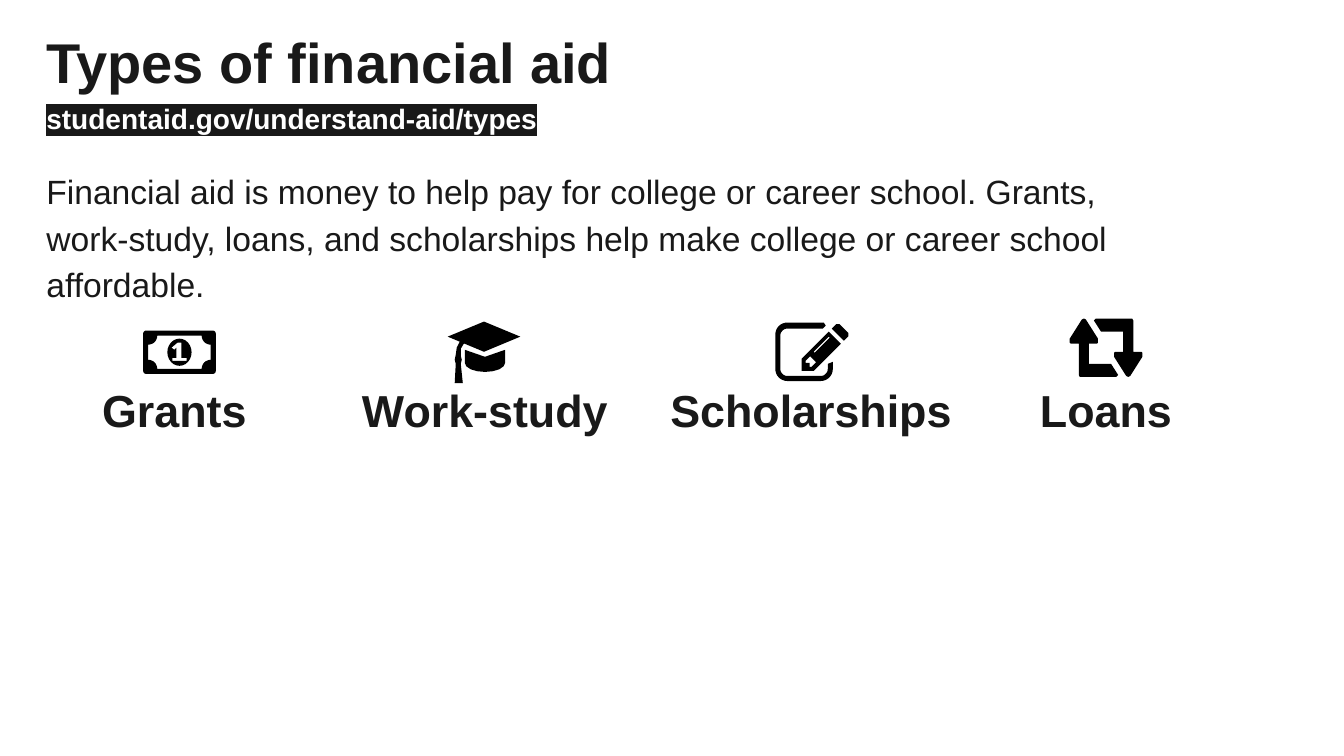
from math import cos, radians, sin

from lxml.etree import SubElement
from pptx import Presentation
from pptx.dml.color import RGBColor
from pptx.enum.text import MSO_ANCHOR as ANCHOR, MSO_AUTO_SIZE as AUTO, PP_ALIGN as ALIGN
from pptx.oxml.ns import qn
from pptx.util import Inches, Pt

INK, WHITE, BLACK = "191919", "FFFFFF", "000000"
LEFT, COLUMN_PITCH = 0.46, 3.08
LABEL_TOP, LABEL_HEIGHT = 3.86, 0.48
ICON_WIDTH = 72
UNITS_PER_INCH, STEPS_PER_UNIT = 100, 10


def rgb(value):
    """Turn a hex string into a colour."""
    return RGBColor.from_string(value)


def apply(target, values):
    """Set every attribute given in a dict of format values."""
    for name, value in values.items():
        setattr(target, name, value)


def arc(cx, cy, rx, ry, start, end, steps=8):
    """List points along an elliptical arc, with angles in degrees."""
    angles = [radians(start + (end - start) * i / steps) for i in range(steps + 1)]
    return [(cx + rx * cos(a), cy + ry * sin(a)) for a in angles]


def rounded_corners(x, y, w, h, r):
    """List a box's four corner arcs clockwise from the top left."""
    centers = [(x + r, y + r), (x + w - r, y + r), (x + w - r, y + h - r), (x + r, y + h - r)]
    return [arc(*center, r, r, 180 + 90 * i, 270 + 90 * i) for i, center in enumerate(centers)]


def notched_corners(x, y, w, h, r):
    """List a box's four scooped corner arcs clockwise from the top left."""
    centers = [(x, y), (x + w, y), (x + w, y + h), (x, y + h)]
    return [arc(*center, r, r, 90 + 90 * i, 90 * i) for i, center in enumerate(centers)]


def half_turn(points, width, height):
    """Rotate points by 180 degrees within an area."""
    return [(width - x, height - y) for x, y in points]


def slanted(points, tip):
    """Map (along, across) points to an axis rising at 45 degrees from a tip."""
    return [(tip[0] + along + across, tip[1] - along + across) for along, across in points]


def symmetric(half):
    """Complete a half profile with its reflection across the axis."""
    return half + [(along, -across) for along, across in reversed(half)]


def banknote():
    """Outline a banknote with a coin and numeral."""
    edge = sum(rounded_corners(0, 0, ICON_WIDTH, 43, 3), [])
    field = sum(notched_corners(5, 5, 62, 33, 9), [])
    coin = arc(36, 21.5, 12, 13.5, 0, 360, steps=24)
    numeral = [(38, 12), (38, 27), (43, 27), (43, 30), (29, 30), (29, 27),
               (33, 27), (33, 17), (31, 19), (28, 17), (34, 12)]
    return [edge, field, coin, numeral]


def graduation_cap():
    """Outline a graduation cap with a tassel."""
    board = [(36, 0), (ICON_WIDTH, 15), (36, 30), (0, 15)]
    crown = [(17, 28), (37, 35), (57, 28)] + arc(37, 41, 20, 9, 0, 180)
    tassel = [(12, 20), (9, 26), (8, 33), (7, 38), (8, 42), (7, 61),
              (15, 61), (13, 42), (14, 38), (13, 34), (13, 27), (16, 22)]
    return [board, crown, tassel]


def pencil_and_paper():
    """Outline a pencil over a sheet open at the top right."""
    tip = (26, 48)
    eraser = symmetric([(36, 6), (40.5, 6), (42, 4.5)])
    barrel = symmetric([(33, 6), (6, 6), (0, 0)])
    nib = symmetric([(11.5, 3), (7, 3), (6, 2), (8, 0)])
    shine = [(30.5, -3.5), (30.5, -2.5), (15.5, -2.5), (15.5, -3.5)]
    top_left, _, *bottom = rounded_corners(0, 0, 57, 58, 12)
    outer = [(57, 39)] + sum(bottom, []) + top_left + [(48, 0), (50, 3)]
    top_left, _, *bottom = rounded_corners(5, 6, 47, 47, 7)
    inner = [(52, 41)] + sum(bottom, []) + top_left + [(47, 6)]
    sheet = outer + inner[::-1]
    return [slanted(part, tip) for part in (eraser, barrel, nib, shine)] + [sheet]


def cycle_arrows():
    """Outline two bent arrows, each a half turn of the other."""
    arrow = [(14, 0), (12, 1), (0, 20), (0, 24), (1, 25), (9, 25), (9, 56), (10, 58), (46, 58),
             (48, 56), (41, 45), (19, 45), (19, 25), (27, 25), (28, 24), (28, 20), (16, 1)]
    return [arrow, half_turn(arrow, ICON_WIDTH, 58)]


AID_TYPES = [
    ("Grants", 2.54, banknote, 1.42, 3.28),
    ("Work-study", 2.54, graduation_cap, 4.44, 3.19),
    ("Scholarships", 2.85, pencil_and_paper, 7.69, 3.2),
    ("Loans", 2.54, cycle_arrows, 10.61, 3.16),
]


def write(sp, box, text, size, color=INK, bold=True, **paragraph):
    """Place a text shape and fill it with one formatted paragraph."""
    apply(sp, dict(zip(("left", "top", "width", "height"), map(Inches, box))))
    tf = sp.text_frame
    apply(tf, {"word_wrap": True, "auto_size": AUTO.NONE, "vertical_anchor": ANCHOR.TOP,
               "margin_left": 0, "margin_top": 0, "margin_right": 0, "margin_bottom": 0})
    p = tf.paragraphs[0]
    apply(p, {"alignment": ALIGN.LEFT, "line_spacing": 0.9, "space_before": Pt(0)} | paragraph)
    r = p.add_run()
    r.text = text
    apply(r.font, {"name": "Arial", "size": Pt(size), "bold": bold})
    r.font.color.rgb = rgb(color)
    return p


def highlight(p, color):
    """Mark the paragraph's run with a background colour."""
    rPr = p.runs[0].font._element
    mark = SubElement(rPr, qn("a:highlight"))
    SubElement(mark, qn("a:srgbClr"), val=color)
    rPr.find(qn("a:solidFill")).addnext(mark)


def remove_bullet(p):
    """Turn off the placeholder's bullet and hanging indent."""
    pPr = p._p.get_or_add_pPr()
    pPr.set("marL", "0")
    pPr.set("indent", "0")
    SubElement(pPr, qn("a:buNone"))


def add_icon(shapes, outlines, left, top):
    """Draw outlines as one black freeform at a position in inches."""
    x0, y0 = left * UNITS_PER_INCH, top * UNITS_PER_INCH
    contours = [[(round((x0 + x) * STEPS_PER_UNIT), round((y0 + y) * STEPS_PER_UNIT))
                 for x, y in outline] for outline in outlines]
    scale = Inches(1) / (UNITS_PER_INCH * STEPS_PER_UNIT)
    builder = shapes.build_freeform(*contours[0][0], scale=scale)
    for i, (start, *rest) in enumerate(contours):
        if i:
            builder.move_to(*start)
        builder.add_line_segments(rest, close=True)
    sp = builder.convert_to_shape()
    sp.shadow.inherit = False
    sp.fill.solid()
    sp.fill.fore_color.rgb = rgb(BLACK)
    sp.line.fill.background()


def add_aid_type(slide, column, name, width, draw, icon_left, icon_top):
    """Group an icon with the label beneath it."""
    shapes = slide.shapes.add_group_shape().shapes
    add_icon(shapes, draw(), icon_left, icon_top)
    box = (LEFT + column * COLUMN_PITCH, LABEL_TOP, width, LABEL_HEIGHT)
    write(shapes.add_textbox(*map(Inches, box)), box, name, 32, alignment=ALIGN.CENTER)


def main():
    """Build the financial aid slide."""
    prs = Presentation()
    prs.slide_width, prs.slide_height = Inches(13.33), Inches(7.5)
    slide = prs.slides.add_slide(prs.slide_layouts[1])
    write(slide.shapes.title, (LEFT, 0.35, 10.53, 0.61), "Types of financial aid", 40)

    loose = {"line_spacing": 1.15, "space_after": Pt(8)}
    box = (LEFT, 0.96, 10.53, 0.34)
    link = slide.shapes.add_textbox(*map(Inches, box))
    highlight(write(link, box, "studentaid.gov/understand-aid/types", 20, WHITE, **loose), INK)

    for column, aid_type in enumerate(AID_TYPES):
        add_aid_type(slide, column, *aid_type)

    remove_bullet(write(
        slide.placeholders[1], (LEFT, 1.64, 10.78, 1.57),
        "Financial aid is money to help pay for college or career school. Grants, work-study, "
        "loans, and scholarships help make college or career school affordable.",
        24, bold=False, **loose))
    prs.save("out.pptx")


if __name__ == "__main__":
    main()
